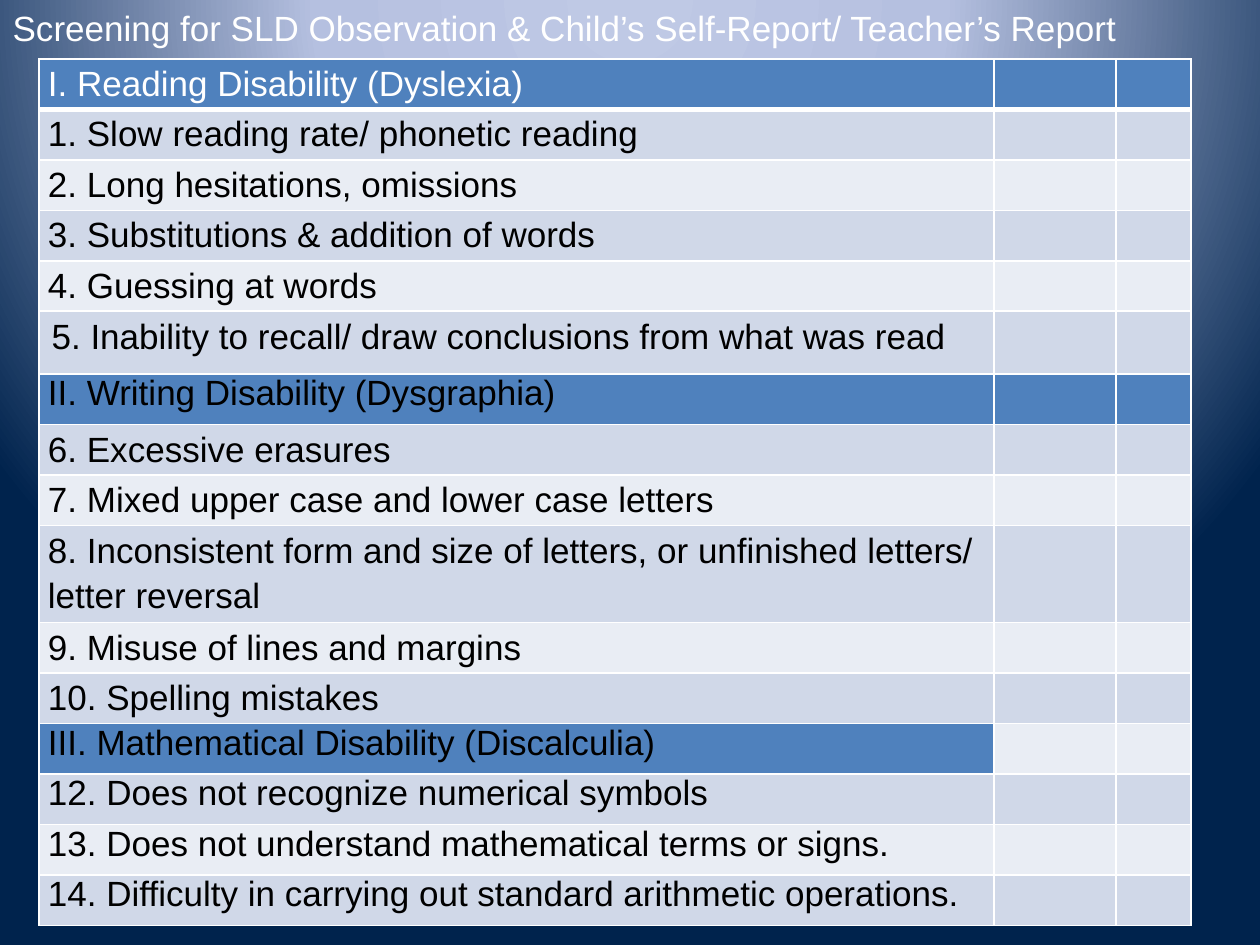
from lxml.etree import SubElement
from pptx import Presentation
from pptx.dml.color import RGBColor
from pptx.enum.text import MSO_ANCHOR, MSO_AUTO_SIZE, PP_ALIGN
from pptx.oxml import parse_xml
from pptx.oxml.ns import nsdecls, qn
from pptx.util import Emu, Pt

FONT = "Arial"
WHITE, BLACK = "FFFFFF", "000000"
HEADING, DARK_BAND, LIGHT_BAND = "4F81BD", "D0D8E8", "E9EDF4"
BACKDROP = [(0, "BFC9E5"), (40, "B5C0E0"), (100, "00234D")]
TITLE = "Screening for SLD Observation & Child’s Self-Report/ Teacher’s Report"

ROW, TALL_ROW, TWO_LINE_ROW = 50, 63, 97
COLUMNS = [955, 122, 75]
SINGLE, LOOSE = 1.0, 1.15
RECALL_ROW, MATH_ROW = 5, 12
CHECKLIST = [
    ("I. Reading Disability (Dyslexia)", ROW, LOOSE),
    ("1. Slow reading rate/ phonetic reading", ROW, LOOSE),
    ("2. Long hesitations, omissions", ROW, LOOSE),
    ("3. Substitutions & addition of words", ROW, LOOSE),
    ("4. Guessing at words", ROW, LOOSE),
    ("5. Inability to recall/ draw conclusions from what was read", TALL_ROW, SINGLE),
    ("II. Writing Disability (Dysgraphia)", ROW, SINGLE),
    ("6. Excessive erasures", ROW, LOOSE),
    ("7. Mixed upper case and lower case letters", ROW, LOOSE),
    ("8. Inconsistent form and size of letters, or unfinished letters/ letter reversal",
     TWO_LINE_ROW, LOOSE),
    ("9. Misuse of lines and margins", ROW, LOOSE),
    ("10. Spelling mistakes", ROW, LOOSE),
    ("III. Mathematical Disability (Discalculia)", ROW, SINGLE),
    ("12. Does not recognize numerical symbols", ROW, SINGLE),
    ("13. Does not understand mathematical terms or signs.", ROW, SINGLE),
    ("14. Difficulty in carrying out standard arithmetic operations.", ROW, SINGLE),
]


def px(length):
    """Turn pixels into EMU at 126 pixels to the inch."""
    return Emu(round(length * 914400 / 126))


def color(hex_code):
    """Turn a hex string into a colour."""
    return RGBColor.from_string(hex_code)


def style(paragraph, hex_code):
    """Set the shared font of a paragraph."""
    paragraph.font.name = FONT
    paragraph.font.size = Pt(20)
    paragraph.font.color.rgb = color(hex_code)


def paint_background(slide):
    """Fill the slide with a radial gradient centred above its top edge."""
    stops = "".join(
        f'<a:gs pos="{percent * 1000}"><a:srgbClr val="{hex_code}"/></a:gs>'
        for percent, hex_code in BACKDROP
    )
    background = parse_xml(
        f'<p:bg {nsdecls("p", "a")}><p:bgPr><a:gradFill rotWithShape="1">'
        f'<a:gsLst>{stops}</a:gsLst><a:path path="circle">'
        '<a:fillToRect l="50000" t="-80000" r="50000" b="180000"/></a:path>'
        '</a:gradFill><a:effectLst/></p:bgPr></p:bg>'
    )
    slide.element.cSld.insert(0, background)


def place_title(slide, left, top, width, height):
    """Put the heading in the title placeholder."""
    title = slide.shapes.title
    title.left, title.top, title.width, title.height = map(px, (left, top, width, height))
    frame = title.text_frame
    frame.text = TITLE
    frame.word_wrap = True
    frame.auto_size = MSO_AUTO_SIZE.SHAPE_TO_FIT_TEXT
    frame.vertical_anchor = MSO_ANCHOR.MIDDLE
    frame.paragraphs[0].alignment = PP_ALIGN.LEFT
    style(frame.paragraphs[0], WHITE)


def band_color(row, column):
    """Pick the fill of a cell from its section and banding."""
    if CHECKLIST[row][0].startswith("I") and (row != MATH_ROW or column == 0):
        return HEADING
    return DARK_BAND if row % 2 else LIGHT_BAND


def draw_borders(cell, row):
    """Draw white cell borders, thick below the first heading."""
    properties = cell._tc.get_or_add_tcPr()
    widths = {"L": 1, "R": 1, "T": 3 if row == 1 else 1, "B": 3 if row == 0 else 1}
    for position, (side, width) in enumerate(widths.items()):
        border = SubElement(properties, qn(f"a:ln{side}"), w=str(Pt(width)))
        fill = SubElement(border, qn("a:solidFill"))
        SubElement(fill, qn("a:srgbClr"), val=WHITE)
        properties.insert(position, border)


def write_item(cell, row, wording, spacing):
    """Write one checklist line into its cell."""
    if row != RECALL_ROW:
        cell.margin_left = cell.margin_right = px(9)
        cell.margin_top = cell.margin_bottom = 0
    cell.text = wording
    paragraph = cell.text_frame.paragraphs[0]
    paragraph.line_spacing = spacing
    style(paragraph, BLACK if row else WHITE)


def place_checklist(slide, left, top):
    """Build the screening table with two empty answer columns."""
    heights = [height for _, height, _ in CHECKLIST]
    checklist = slide.shapes.add_table(
        len(CHECKLIST), len(COLUMNS), px(left), px(top), px(sum(COLUMNS)), px(sum(heights))
    ).table
    checklist.first_row = checklist.horz_banding = False
    for column, width in zip(checklist.columns, COLUMNS):
        column.width = px(width)
    for row, (wording, height, spacing) in enumerate(CHECKLIST):
        checklist.rows[row].height = px(height)
        write_item(checklist.cell(row, 0), row, wording, spacing)
        for column in range(len(COLUMNS)):
            cell = checklist.cell(row, column)
            cell.fill.solid()
            cell.fill.fore_color.rgb = color(band_color(row, column))
            draw_borders(cell, row)


def main():
    """Build and save the screening slide."""
    deck = Presentation()
    deck.slide_width, deck.slide_height = px(1260), px(945)
    slide = deck.slides.add_slide(deck.slide_layouts[5])
    paint_background(slide)
    place_title(slide, 0, 0, 1260, 55)
    place_checklist(slide, 39, 59)
    deck.save("out.pptx")


if __name__ == "__main__":
    main()
